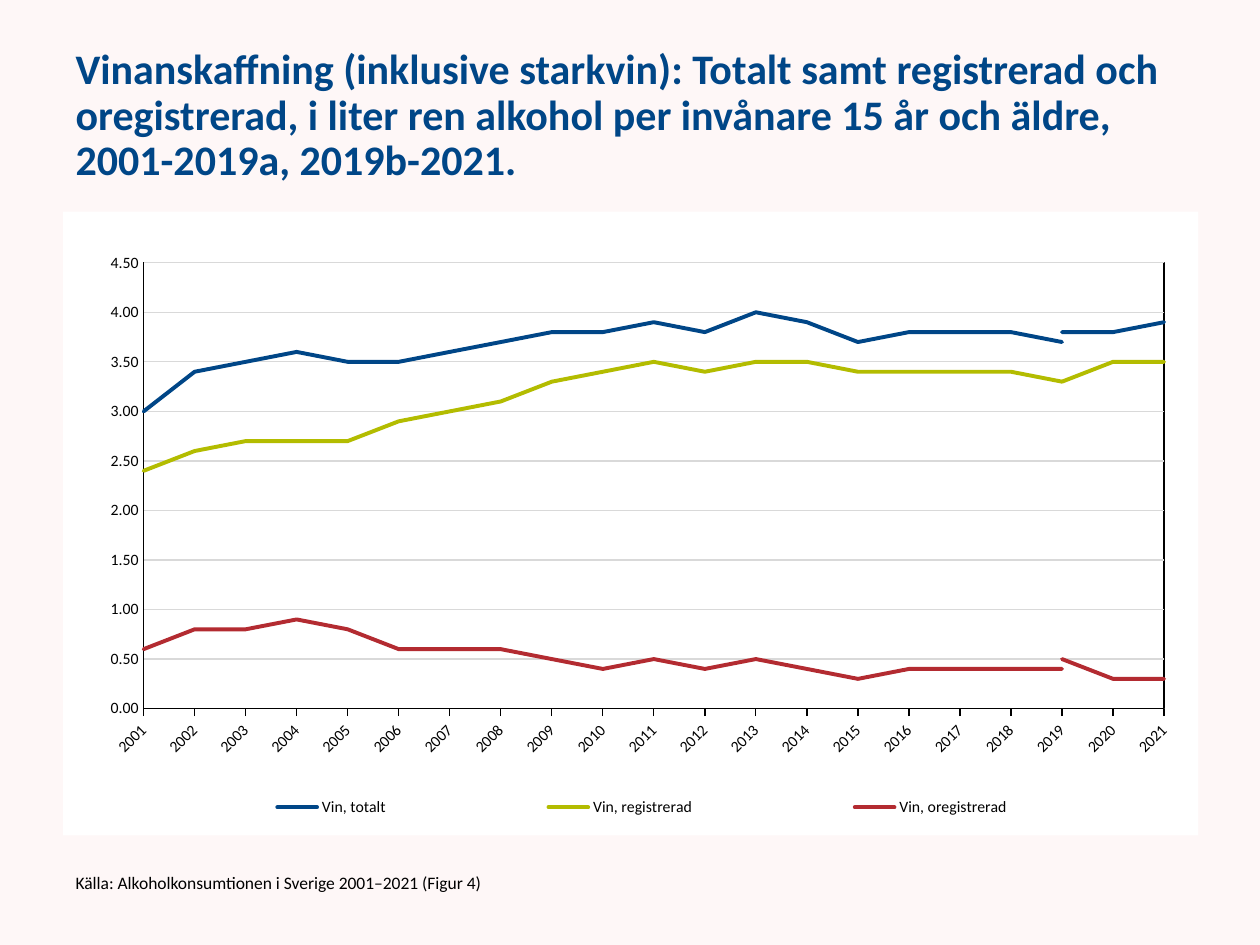
from pptx import Presentation
from pptx.chart.data import CategoryChartData
from pptx.dml.color import RGBColor
from pptx.enum.chart import XL_CHART_TYPE, XL_LEGEND_POSITION, XL_MARKER_STYLE, XL_TICK_MARK
from pptx.enum.text import MSO_ANCHOR, MSO_AUTO_SIZE, PP_ALIGN
from pptx.oxml import parse_xml
from pptx.oxml.ns import nsdecls, qn
from pptx.util import Inches, Pt

FONT = "Calibri"
YEARS = range(2001, 2022)
WINE = [
    ("Vin, totalt", "004687",
     [3, 3.4, 3.5, 3.6, 3.5, 3.5, 3.6, 3.7, 3.8, 3.8, 3.9, 3.8,
      4, 3.9, 3.7, 3.8, 3.8, 3.8, 3.7],
     [3.8, 3.8, 3.9]),
    ("Vin, registrerad", "B3BC00",
     [2.4, 2.6, 2.7, 2.7, 2.7, 2.9, 3, 3.1, 3.3, 3.4, 3.5, 3.4,
      3.5, 3.5, 3.4, 3.4, 3.4, 3.4, 3.3],
     [3.3, 3.5, 3.5]),
    ("Vin, oregistrerad", "B32B31",
     [0.6, 0.8, 0.8, 0.9, 0.8, 0.6, 0.6, 0.6, 0.5, 0.4, 0.5, 0.4,
      0.5, 0.4, 0.3, 0.4, 0.4, 0.4, 0.4],
     [0.5, 0.3, 0.3]),
]


def colour(value):
    """Turn a hex string into a colour."""
    return RGBColor.from_string(value)


def style_font(font, size, shade="000000", bold=False):
    """Set the typeface, size, colour and weight of a font."""
    font.name, font.size, font.bold = FONT, Pt(size), bold
    font.color.rgb = colour(shade)


def style_line(line, shade, width):
    """Set the colour and width of a line."""
    line.color.rgb = colour(shade)
    line.width = Pt(width)


def fill_placeholder(holder, box, text, size, shade, bold=False):
    """Move a placeholder to its box and write one unbulleted paragraph."""
    holder.left, holder.top, holder.width, holder.height = map(Inches, box)
    frame = holder.text_frame
    frame.text = text
    frame.word_wrap = True
    frame.auto_size = MSO_AUTO_SIZE.NONE
    frame.vertical_anchor = MSO_ANCHOR.MIDDLE
    para = frame.paragraphs[0]
    properties = para._p.get_or_add_pPr()
    properties.set("marL", "0")
    properties.set("indent", "0")
    properties.append(parse_xml(f"<a:buNone {nsdecls('a')}/>"))
    para.alignment = PP_ALIGN.LEFT
    para.line_spacing = 0.9
    para.space_before = Pt(0)
    style_font(para.runs[0].font, size, shade, bold)


def place_layout(parent, index, box, inner=False):
    """Give a chart part a manual layout in shares of the chart."""
    for old in parent.findall(qn("c:layout")):
        parent.remove(old)
    target = '<c:layoutTarget val="inner"/>' if inner else ""
    modes = '<c:xMode val="edge"/><c:yMode val="edge"/>'
    places = "".join(f'<c:{key} val="{share}"/>' for key, share in zip("xywh", box))
    parent.insert(index, parse_xml(
        f"<c:layout {nsdecls('c')}><c:manualLayout>{target}{modes}{places}"
        "</c:manualLayout></c:layout>"))


def shape_properties(content):
    """Make the fill and line element of a chart part."""
    return parse_xml(f"<c:spPr {nsdecls('c', 'a')}>{content}</c:spPr>")


def wine_data():
    """Collect each measure as one series before and one after the break."""
    data = CategoryChartData(number_format="0.00")
    data.categories = [str(year) for year in YEARS]
    for index, (name, _, before, after) in enumerate(WINE):
        data.add_series(name, before + [None] * (len(YEARS) - len(before)))
        data.add_series(f"Series {2 * index + 2}",
                        [None] * (len(YEARS) - len(after)) + after)
    return data


def style_axes(chart):
    """Format the year axis and the litre axis."""
    for axis in (chart.category_axis, chart.value_axis):
        style_line(axis.format.line, "000000", 0.75)
        style_font(axis.tick_labels.font, 9)
        axis.minor_tick_mark = XL_TICK_MARK.NONE
    years, litres = chart.category_axis, chart.value_axis
    years.major_tick_mark = XL_TICK_MARK.OUTSIDE
    years._element.find(qn("c:txPr")).find(qn("a:bodyPr")).set("rot", "-2700000")
    litres.major_tick_mark = XL_TICK_MARK.NONE
    litres.minimum_scale, litres.maximum_scale, litres.major_unit = 0, 4.5, 0.5
    litres.tick_labels.number_format = "0.00"
    litres.tick_labels.number_format_is_linked = False
    litres.has_major_gridlines = True
    style_line(litres.major_gridlines.format.line, "D9D9D9", 0.75)
    crossing = litres._element.find(qn("c:crossBetween"))
    if crossing is None:
        crossing = parse_xml(f"<c:crossBetween {nsdecls('c')}/>")
        litres._element.find(qn("c:crosses")).addnext(crossing)
    crossing.set("val", "midCat")


def style_legend(chart):
    """Show one legend entry for each measure below the plot."""
    chart.has_legend = True
    legend = chart.legend
    legend.position = XL_LEGEND_POSITION.BOTTOM
    legend.include_in_layout = False
    style_font(legend.font, 9)
    place_layout(legend._element, 1, (0.05, 0.92, 0.92, 0.07))
    for hidden in (5, 3, 1):
        legend._element.insert(1, parse_xml(
            f"<c:legendEntry {nsdecls('c')}><c:idx val=\"{hidden}\"/>"
            '<c:delete val="1"/></c:legendEntry>'))


def style_series(plot):
    """Give both series of each measure the same round-ended line."""
    plot.vary_by_categories = False
    for index, series in enumerate(plot.series):
        series.smooth = False
        series.marker.style = XL_MARKER_STYLE.NONE
        style_line(series.format.line, WINE[index // 2][1], 2.25)
        series._element.find(qn("c:spPr")).find(qn("a:ln")).set("cap", "rnd")


def add_wine_chart(page, box):
    """Draw the line chart in its box."""
    chart = page.shapes.add_chart(
        XL_CHART_TYPE.LINE, *map(Inches, box), wine_data()).chart
    chart.has_title = False
    style_font(chart.font, 10)
    style_series(chart.plots[0])
    style_axes(chart)
    style_legend(chart)
    area = chart._chartSpace.chart
    plot = area.plotArea
    place_layout(plot, 0, (0.07, 0.08, 0.9, 0.72), inner=True)
    place_layout(plot, 0, (0.071, 0.082, 0.899, 0.715), inner=True)
    plot.append(shape_properties(
        '<a:noFill/><a:ln w="9525"><a:solidFill><a:srgbClr val="000000"/>'
        "</a:solidFill></a:ln>"))
    area.addnext(shape_properties(
        '<a:solidFill><a:srgbClr val="FFFFFF"/></a:solidFill>'
        "<a:ln><a:noFill/></a:ln>"))


def main():
    """Build the slide and save it."""
    deck = Presentation()
    deck.slide_width, deck.slide_height = Inches(10), Inches(7.5)
    page = deck.slides.add_slide(deck.slide_layouts[1])
    page.background.fill.solid()
    page.background.fill.fore_color.rgb = colour("FEF7F7")
    fill_placeholder(
        page.shapes.title, (0.5, 0.3, 9, 1.25),
        "Vinanskaffning (inklusive starkvin): Totalt samt registrerad och "
        "oregistrerad, i liter ren alkohol per invånare 15 år och äldre, "
        "2001-2019a, 2019b-2021.", 24, "004687", True)
    fill_placeholder(
        page.placeholders[1], (0.5, 6.83, 4.5, 0.37),
        "Källa: Alkoholkonsumtionen i Sverige 2001–2021 (Figur 4)", 10, "000000")
    add_wine_chart(page, (0.5, 1.68, 9.01, 4.95))
    deck.save("out.pptx")


if __name__ == "__main__":
    main()
